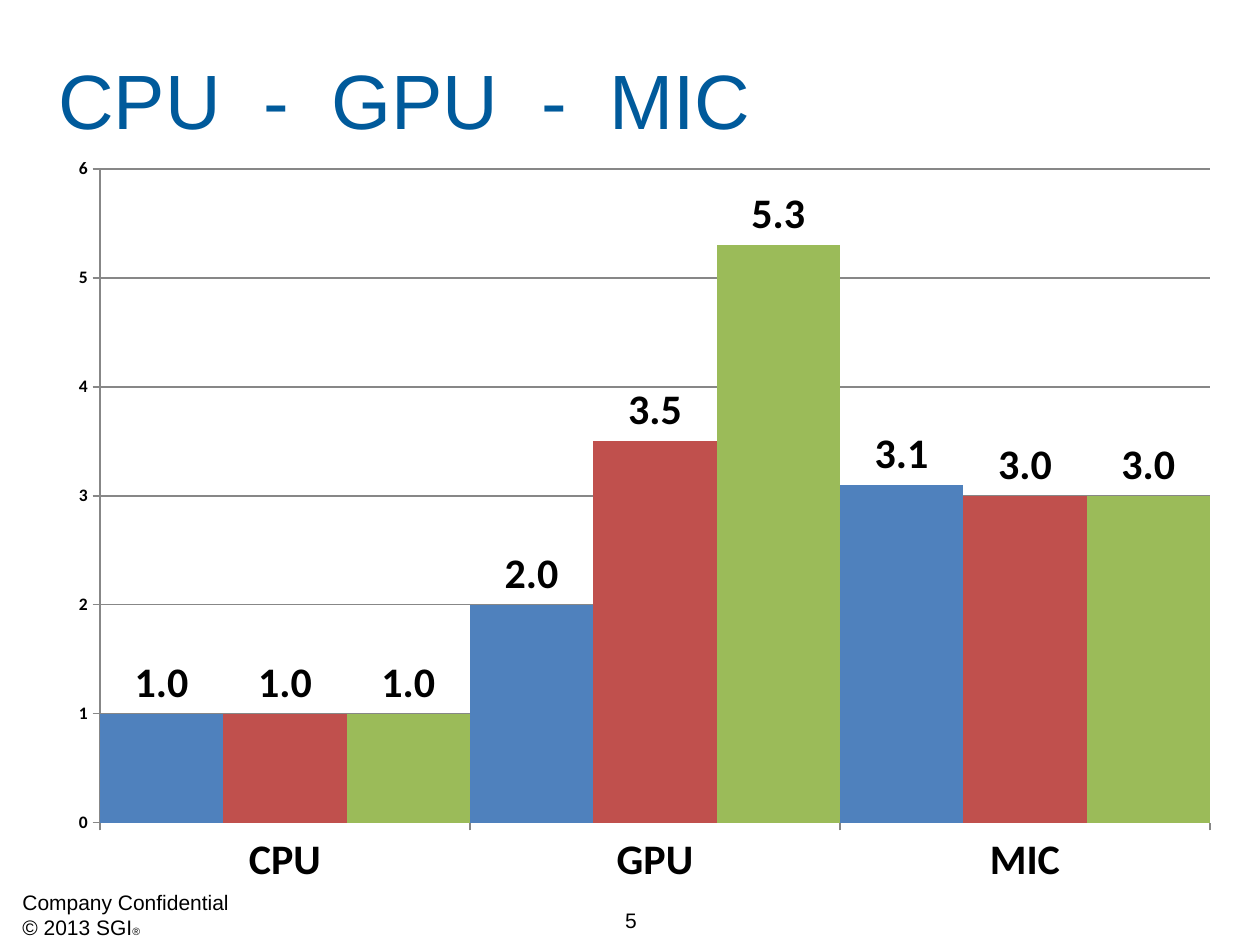
from lxml.etree import SubElement
from pptx import Presentation
from pptx.chart.data import CategoryChartData
from pptx.dml.color import RGBColor
from pptx.enum.chart import XL_CHART_TYPE, XL_LABEL_POSITION, XL_TICK_MARK
from pptx.enum.text import MSO_ANCHOR, PP_ALIGN
from pptx.oxml.ns import qn
from pptx.util import Pt

PX = 914400 / 126
COLORS = {
    "text": "000000",
    "title": "005A9B",
    "axis": "878787",
    "blue": "4F81BD",
    "red": "C0504D",
    "green": "9BBB59",
}


def px(*lengths):
    return [round(length * PX) for length in lengths]


def rgb(name):
    return RGBColor.from_string(COLORS[name])


class SlideBuilder:
    def __init__(self, slide, text_font="Arial", chart_font="Calibri"):
        self.slide = slide
        self.text_font = text_font
        self.chart_font = chart_font

    def text(self, box, paragraphs, color="text", align=PP_ALIGN.LEFT,
             anchor=MSO_ANCHOR.TOP, space_after=0):
        frame = self.slide.shapes.add_textbox(*px(*box)).text_frame
        frame.word_wrap = True
        frame.vertical_anchor = anchor
        for index, runs in enumerate(paragraphs):
            paragraph = frame.add_paragraph() if index else frame.paragraphs[0]
            paragraph.alignment = align
            paragraph.space_after = Pt(space_after)
            for words, size in runs:
                run = paragraph.add_run()
                run.text = words
                run.font.name = self.text_font
                run.font.size = Pt(size)
                run.font.color.rgb = rgb(color)

    def style_font(self, font, size):
        font.name = self.chart_font
        font.size = Pt(size)
        font.bold = True
        font.color.rgb = rgb("text")

    def style_axis(self, axis, size):
        self.style_font(axis.tick_labels.font, size)
        axis.major_tick_mark = XL_TICK_MARK.OUTSIDE
        axis.minor_tick_mark = XL_TICK_MARK.NONE
        axis.format.line.color.rgb = rgb("axis")
        axis.format.line.width = Pt(0.75)

    def place_plot(self, chart, box, plot_box):
        left, top, width, height = box
        plot_left, plot_top, plot_width, plot_height = plot_box
        fractions = {
            "x": (plot_left - left) / width,
            "y": (plot_top - top) / height,
            "w": plot_width / width,
            "h": plot_height / height,
        }
        plot_area = chart.plots[0]._element.getparent()
        layout = plot_area.find(qn("c:layout"))
        if layout is None:
            layout = SubElement(plot_area, qn("c:layout"))
            plot_area.insert(0, layout)
        manual = SubElement(layout, qn("c:manualLayout"))
        settings = {"layoutTarget": "inner", "xMode": "edge", "yMode": "edge"}
        settings.update({key: f"{value:.4f}" for key, value in fractions.items()})
        for tag, value in settings.items():
            SubElement(manual, qn(f"c:{tag}")).set("val", value)

    def column_chart(self, box, plot_box, categories, series_rows):
        data = CategoryChartData(number_format="0.0")
        data.categories = categories
        for name, values, _ in series_rows:
            data.add_series(name, values)
        chart = self.slide.shapes.add_chart(
            XL_CHART_TYPE.COLUMN_CLUSTERED, *px(*box), data).chart
        chart.has_legend = False
        chart.has_title = False
        self.style_font(chart.font, 10)
        self.place_plot(chart, box, plot_box)

        self.style_axis(chart.category_axis, 24)
        value_axis = chart.value_axis
        self.style_axis(value_axis, 10)
        value_axis.minimum_scale, value_axis.maximum_scale = 0, 6
        value_axis.major_unit = 1
        value_axis.tick_labels.number_format = "0"
        value_axis.tick_labels.number_format_is_linked = False
        value_axis.has_major_gridlines = True
        gridline = value_axis.major_gridlines.format.line
        gridline.color.rgb = rgb("axis")
        gridline.width = Pt(0.75)

        plot = chart.plots[0]
        plot.gap_width = 0
        plot.overlap = 0
        plot.vary_by_categories = False
        for series, (_, _, color) in zip(plot.series, series_rows):
            series.format.fill.solid()
            series.format.fill.fore_color.rgb = rgb(color)
            series.invert_if_negative = False
            labels = series.data_labels
            labels.show_value = True
            labels.number_format = "0.0"
            labels.number_format_is_linked = False
            labels.position = XL_LABEL_POSITION.OUTSIDE_END
            self.style_font(labels.font, 24)


def main():
    presentation = Presentation()
    presentation.slide_width, presentation.slide_height = px(1260, 945)
    slide = presentation.slides.add_slide(presentation.slide_layouts[6])
    builder = SlideBuilder(slide)

    builder.text((10, 883, 420, 33), [
        [("Company Confidential", 12)],
        [("© 2013 SGI", 12), ("®", 6)],
    ])
    builder.text((527, 901, 208, 38), [[("5", 12)]], align=PP_ALIGN.CENTER)
    builder.text((46, 43, 1172, 111), [[("CPU  -  GPU  -  MIC", 44)]],
                 color="title", anchor=MSO_ANCHOR.MIDDLE, space_after=6)
    builder.column_chart(
        (55, 145, 1178, 757), (100, 169, 1110, 654),
        ["CPU", "GPU", "MIC"],
        [
            ("Series 1", (1, 2, 3.1), "blue"),
            ("Series 2", (1, 3.5, 3), "red"),
            ("Series 3", (1, 5.3, 3), "green"),
        ])
    presentation.save("out.pptx")


if __name__ == "__main__":
    main()
